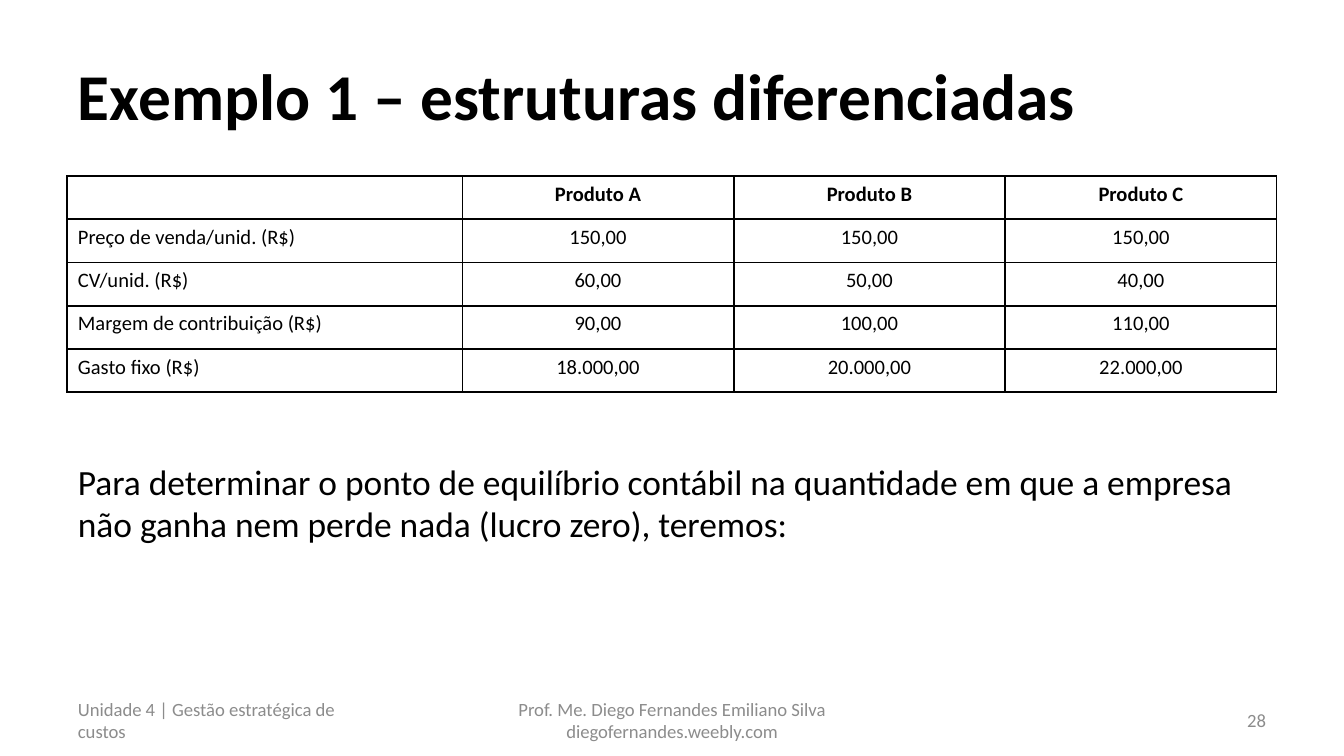
"""Build the slide on cost structures of three products."""
from lxml.etree import SubElement
from pptx import Presentation
from pptx.dml.color import RGBColor
from pptx.enum.text import MSO_ANCHOR, PP_ALIGN
from pptx.oxml.ns import qn
from pptx.util import Inches, Pt

COLORS = {"ink": "000000", "paper": "FFFFFF", "muted": "8C8C8C"}
WIDTH = 10
HEIGHT = WIDTH * 9 / 16
MARGIN = WIDTH / 20
CONTENT = WIDTH - 2 * MARGIN
LEFT, CENTER, RIGHT = PP_ALIGN.LEFT, PP_ALIGN.CENTER, PP_ALIGN.RIGHT
INSETS = {"margin_left": Inches(0.08), "margin_right": Inches(0.08),
          "margin_top": Inches(0.04), "margin_bottom": Inches(0.04)}


def write(frame, text, size, align=LEFT, bold=False, color="ink"):
    paragraph = frame.paragraphs[0]
    paragraph.alignment = align
    run = paragraph.add_run()
    run.text = text
    for name, value in {"name": "Calibri", "size": Pt(size), "bold": bold}.items():
        setattr(run.font, name, value)
    run.font.color.rgb = RGBColor.from_string(COLORS[color])


def place(shape, left, top, width, height, anchor):
    box = {"left": left, "top": top, "width": width, "height": height}
    for name, value in box.items():
        setattr(shape, name, Inches(value))
    for name, value in {**INSETS, "word_wrap": True, "vertical_anchor": anchor}.items():
        setattr(shape.text_frame, name, value)
    return shape.text_frame


presentation = Presentation()
presentation.slide_width, presentation.slide_height = Inches(WIDTH), Inches(HEIGHT)
slide = presentation.slides.add_slide(presentation.slide_layouts[5])
slide.background.fill.solid()
slide.background.fill.fore_color.rgb = RGBColor.from_string(COLORS["paper"])

title = place(slide.shapes.title, MARGIN, 0.23, CONTENT, 0.94, MSO_ANCHOR.MIDDLE)
write(title, "Exemplo 1 – estruturas diferenciadas", 35, bold=True)

rows = [
    ["", "Produto A", "Produto B", "Produto C"],
    ["Preço de venda/unid. (R$)", "150,00", "150,00", "150,00"],
    ["CV/unid. (R$)", "60,00", "50,00", "40,00"],
    ["Margem de contribuição (R$)", "90,00", "100,00", "110,00"],
    ["Gasto fixo (R$)", "18.000,00", "20.000,00", "22.000,00"],
]
product_width = 2.02
column_widths = [CONTENT - 3 * product_width] + [product_width] * 3
table = slide.shapes.add_table(len(rows), len(column_widths), Inches(MARGIN),
                               Inches(1.31), Inches(CONTENT), Inches(1.61)).table
table.first_row = table.horz_banding = False
for column, width in zip(table.columns, column_widths):
    column.width = Inches(width)

for row_index, row in enumerate(rows):
    for column_index, text in enumerate(row):
        cell = table.cell(row_index, column_index)
        for name, value in INSETS.items():
            setattr(cell, name, value)
        if text:
            write(cell.text_frame, text, 11, CENTER if column_index else LEFT,
                  bold=row_index == 0)
        else:
            SubElement(cell.text_frame.paragraphs[0]._p, qn("a:endParaRPr"), sz="1100")
        properties = cell._tc.get_or_add_tcPr()
        for edge in ("lnL", "lnR", "lnT", "lnB"):
            line = SubElement(properties, qn(f"a:{edge}"), w=str(Pt(1)))
            fill = SubElement(line, qn("a:solidFill"))
            SubElement(fill, qn("a:srgbClr"), val=COLORS["ink"])
        cell.fill.solid()
        cell.fill.fore_color.rgb = RGBColor.from_string(COLORS["paper"])

body = place(slide.shapes.add_textbox(0, 0, 0, 0), MARGIN, 3.38, CONTENT, 0.72,
             MSO_ANCHOR.TOP)
write(body, "Para determinar o ponto de equilíbrio contábil na quantidade em que a "
      "empresa não ganha nem perde nada (lucro zero), teremos:", 19)

side, middle = 2.33, 3.17
footers = [
    ("Unidade 4 | Gestão estratégica de custos", MARGIN, side, LEFT),
    ("Prof. Me. Diego Fernandes Emiliano Silva diegofernandes.weebly.com",
     (WIDTH - middle) / 2, middle, CENTER),
    ("28", WIDTH - MARGIN - side, side, RIGHT),
]
for text, left, width, align in footers:
    footer = place(slide.shapes.add_textbox(0, 0, 0, 0), left, 5.21, width, 0.3,
                   MSO_ANCHOR.MIDDLE)
    write(footer, text, 10, align, color="muted")

presentation.save("out.pptx")
